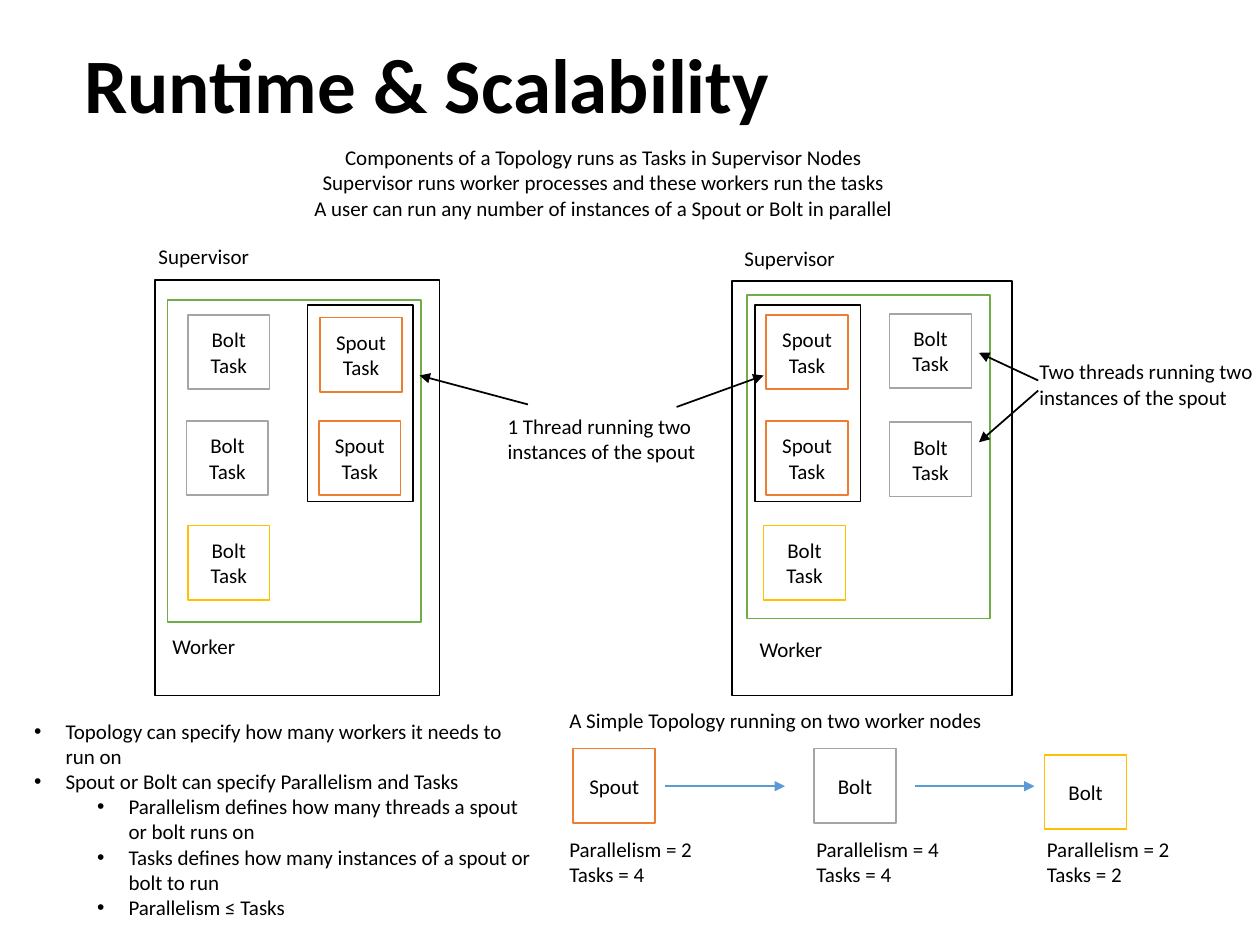
from lxml.etree import SubElement as Sub
from pptx import Presentation as Deck
from pptx.dml.color import RGBColor as Rgb
from pptx.enum.shapes import MSO_CONNECTOR as Link, MSO_SHAPE as Form
from pptx.enum.text import MSO_ANCHOR as Anchor, MSO_AUTO_SIZE as Fit, PP_ALIGN as Align
from pptx.oxml.ns import qn
from pptx.util import Inches, Pt

HUES = {"ink": "000000", "paper": "FFFFFF", "spout": "ED7D31", "bolt": "A5A5A5",
        "sink": "FFC000", "worker": "70AD47", "flow": "5B9BD5"}
FONT = {"name": "Calibri", "size": Pt(12), "bold": False}
HEAD = {"name": "Calibri", "size": Pt(44), "bold": True}
TASK = (0.65, 0.59)
THREAD = (0.84, 1.56)

NODES = [
    {"box": (1.23, 2.22, 2.26, 3.3), "worker": (0.1, 0.16, 2.01, 2.56),
     "thread": (1.21, 0.2), "labels": [("Supervisor", -0.07, -0.34), ("Worker", 0.04, 2.76)],
     "tasks": [("bolt", 0.26, 0.28), ("bolt", 0.25, 1.12), ("sink", 0.26, 1.95),
               ("spout", 1.31, 0.3), ("spout", 1.3, 1.12)]},
    {"box": (5.81, 2.23, 2.22, 3.29), "worker": (0.12, 0.11, 1.93, 2.57),
     "thread": (0.18, 0.19), "labels": [("Supervisor", 0, -0.33), ("Worker", 0.12, 2.77)],
     "tasks": [("bolt", 1.25, 0.26), ("bolt", 1.25, 1.12), ("sink", 0.25, 1.94),
               ("spout", 0.27, 0.27), ("spout", 0.27, 1.11)]},
]
STAGES = [("spout", 0.13, 0.37, 0, 2, 4), ("bolt", 2.04, 0.37, 1.96, 4, 4),
          ("sink", 3.87, 0.42, 3.79, 2, 2)]
NOTES = [
    (0, "Topology can specify how many workers it needs to run on"),
    (0, "Spout or Bolt can specify Parallelism and Tasks"),
    (1, "Parallelism defines how many threads a spout or bolt runs on"),
    (1, "Tasks defines how many instances of a spout or bolt to run"),
    (1, "Parallelism ≤ Tasks"),
]
CALLS = [
    {"box": (3.93, 3.23, 1.71, 0.5), "text": "1 Thread running two\ninstances of the spout",
     "lines": [(1.44, 0, 2.13, -0.25), (0.26, -0.02, -0.6, -0.25)]},
    {"box": (8.15, 2.8, 1.95, 0.5), "text": "Two threads running two\ninstances of the spout",
     "lines": [(0.09, 0.22, -0.38, 0), (0.09, 0.3, -0.38, 0.71)]},
]


def tint(hue):
    """Return the colour of that name."""
    return Rgb.from_string(HUES[hue])


def style(para, look, align=Align.LEFT):
    """Give a paragraph its font and alignment."""
    para.alignment = align
    for key, value in look.items():
        setattr(para.font, key, value)
    para.font.color.rgb = tint("ink")


def write(frame, text, align):
    """Fill a text frame with one paragraph per line."""
    frame.text = text
    for para in frame.paragraphs:
        style(para, FONT, align)


def label(slide, text, box, align=Align.LEFT):
    """Add an unwrapped text box."""
    frame = slide.shapes.add_textbox(*map(Inches, box)).text_frame
    write(frame, text, align)
    frame.word_wrap = False
    frame.auto_size = Fit.SHAPE_TO_FIT_TEXT


def block(slide, hue, box, text=""):
    """Add an outlined rectangle with optional centred text."""
    shape = slide.shapes.add_shape(Form.RECTANGLE, *map(Inches, box))
    shape.shadow.inherit = False
    shape.fill.solid()
    shape.fill.fore_color.rgb = tint("paper")
    shape.line.color.rgb = tint(hue)
    shape.line.width = Pt(1)
    if text:
        write(shape.text_frame, text, Align.CENTER)
        shape.text_frame.vertical_anchor = Anchor.MIDDLE


def arrow(slide, hue, ends):
    """Add a straight arrow from the first point to the second."""
    line = slide.shapes.add_connector(Link.STRAIGHT, *map(Inches, ends))
    line.line.color.rgb = tint(hue)
    line.line.width = Pt(1)
    Sub(line.line._get_or_add_ln(), qn("a:tailEnd"), type="triangle")
    Sub(line._element.spPr, qn("a:effectLst"))


def place(shape, box):
    """Move a placeholder to a box."""
    for key, value in zip(("left", "top", "width", "height"), box):
        setattr(shape, key, Inches(value))


def title(slide, box):
    """Set the slide title."""
    shape = slide.shapes.title
    place(shape, box)
    frame = shape.text_frame
    frame.text = "Runtime & Scalability"
    frame.vertical_anchor = Anchor.MIDDLE
    frame.auto_size = Fit.NONE
    style(frame.paragraphs[0], HEAD)
    frame.paragraphs[0].line_spacing = 0.9


def notes(slide, box):
    """Set the bulleted list."""
    shape = slide.placeholders[1]
    place(shape, box)
    frame = shape.text_frame
    frame.text = "\n".join(text for _, text in NOTES)
    frame.auto_size = Fit.NONE
    for para, (level, _) in zip(frame.paragraphs, NOTES):
        style(para, FONT)
        para.level = level
        para.space_before = Pt(0)
        props = para._p.get_or_add_pPr()
        props.set("marL", str(Inches(0.25 + 0.5 * level)))
        props.set("indent", str(Inches(-0.25)))
        Sub(props, qn("a:buFont"), typeface="Arial")
        Sub(props, qn("a:buChar"), char="•")


def node(slide, part):
    """Draw a supervisor with its worker, thread and tasks."""
    left, top, _, _ = part["box"]
    block(slide, "ink", part["box"])
    x, y, wide, high = part["worker"]
    block(slide, "worker", (left + x, top + y, wide, high))
    x, y = part["thread"]
    block(slide, "ink", (left + x, top + y, *THREAD))
    for hue, x, y in part["tasks"]:
        name = "Spout" if hue == "spout" else "Bolt"
        block(slide, hue, (left + x, top + y, *TASK), f"{name}\nTask")
    for text, x, y in part["labels"]:
        label(slide, text, (left + x, top + y, 0.93 if y < 0 else 0.7, 0.3))


def flow(slide, box):
    """Draw the simple topology with its settings."""
    left, top, _, _ = box
    label(slide, "A Simple Topology running on two worker nodes", (left, top, 3.51, 0.3))
    for hue, x, y, shift, threads, tasks in STAGES:
        name = "Spout" if hue == "spout" else "Bolt"
        block(slide, hue, (left + x, top + y, *TASK), name)
        label(slide, f"Parallelism = {threads}\nTasks = {tasks}",
              (left + shift, top + 1.02, 1.19, 0.5))
    for x in (0.86, 2.84):
        arrow(slide, "flow", (left + x, top + 0.67, left + x + 0.95, top + 0.67))


def call(slide, part):
    """Draw a remark and its arrows."""
    left, top, _, _ = part["box"]
    label(slide, part["text"], part["box"])
    for x, y, far, low in part["lines"]:
        arrow(slide, "ink", (left + x, top + y, left + far, top + low))


def main():
    """Build and save the slide."""
    deck = Deck()
    deck.slide_width, deck.slide_height = Inches(10), Inches(7.5)
    slide = deck.slides.add_slide(deck.slide_layouts[1])
    title(slide, (0.57, 0.09, 8.62, 1.22))
    label(slide, "Components of a Topology runs as Tasks in Supervisor Nodes\n"
          "Supervisor runs worker processes and these workers run the tasks\n"
          "A user can run any number of instances of a Spout or Bolt in parallel",
          (2.39, 1.1, 4.8, 0.71), Align.CENTER)
    for part in NODES:
        node(slide, part)
    notes(slide, (0.17, 5.65, 4.15, 1.72))
    flow(slide, (4.42, 5.57, 4.98, 1.52))
    for part in CALLS:
        call(slide, part)
    deck.save("out.pptx")


if __name__ == "__main__":
    main()
